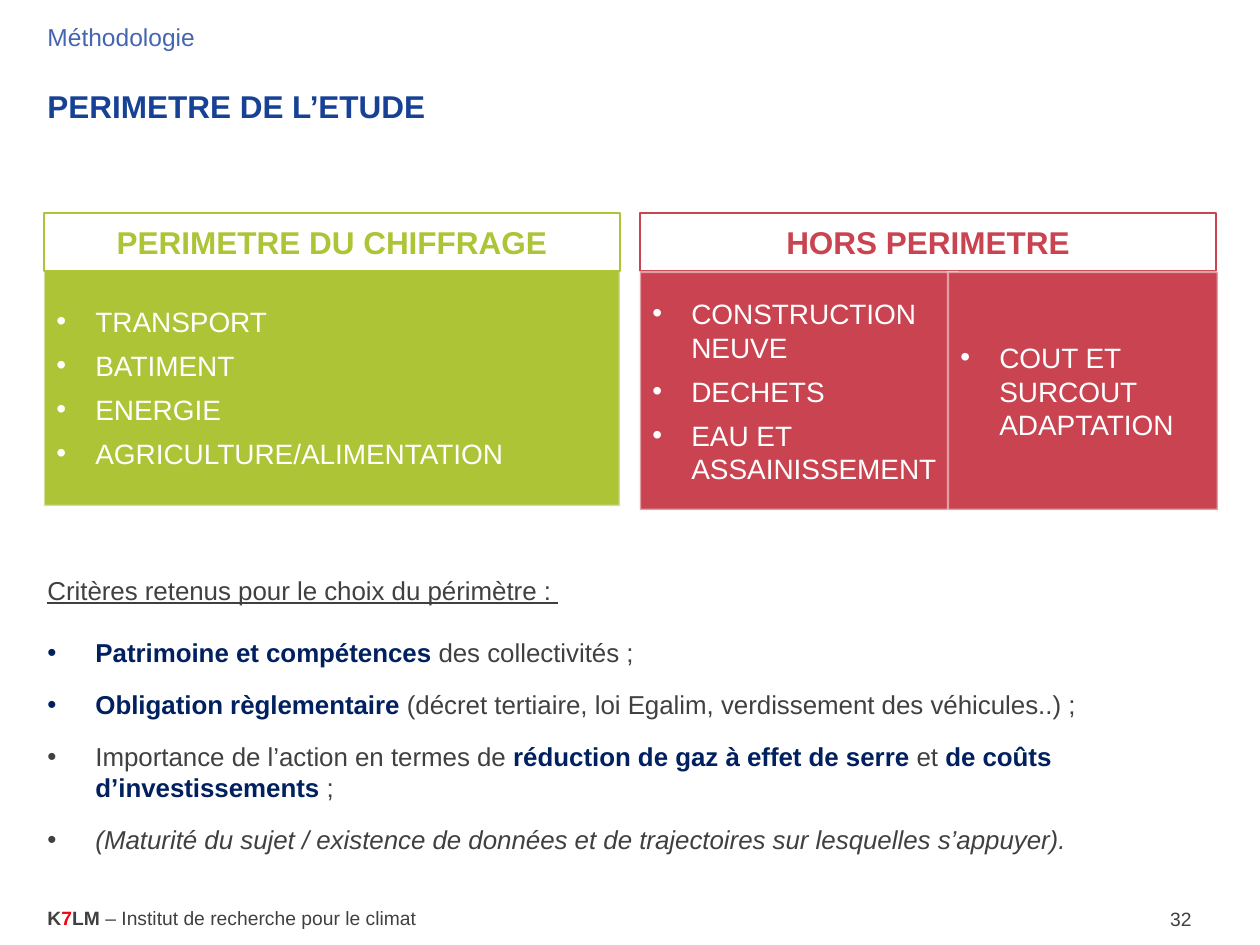
from dataclasses import dataclass

from lxml.etree import SubElement
from pptx import Presentation
from pptx.dml.color import RGBColor as Rgb
from pptx.enum.shapes import MSO_SHAPE as Shape
from pptx.enum.text import MSO_ANCHOR as Anchor, PP_ALIGN as Align
from pptx.oxml.ns import qn
from pptx.util import Emu, Pt

SCALE = 914400 / 126


def px(n):
    return Emu(round(n * SCALE))


@dataclass(frozen=True)
class Theme:
    font: str = "Arial"
    white: str = "FFFFFF"
    pale: str = "F9F9F9"
    grey: str = "404041"
    navy: str = "002060"
    blue: str = "174195"
    sky: str = "4565AF"
    lime: str = "ACC435"
    rose: str = "C94450"
    red: str = "EE0612"
    head: float = 18
    item: float = 16
    body: float = 14.8
    lead: float = 14
    foot: float = 11


class Deck:
    def __init__(self, theme):
        self.theme = theme
        self.file = Presentation()
        self.file.slide_width, self.file.slide_height = px(1260), px(945)
        self.slide = self.file.slides.add_slide(self.file.slide_layouts[6])

    def para(self, frame, runs, size, first=False, align=Align.LEFT,
             before=0, after=0, indent=0, line=None):
        par = frame.paragraphs[0] if first else frame.add_paragraph()
        par.alignment = align
        par.space_before, par.space_after = Pt(before), Pt(after)
        if line:
            par.line_spacing = line
        if indent:
            props = par._p.get_or_add_pPr()
            props.set("marL", str(px(indent)))
            props.set("indent", str(-px(indent)))
            SubElement(props, qn("a:buFont"), typeface=self.theme.font)
            SubElement(props, qn("a:buChar"), char="•")
        for text, color, style in runs:
            run = par.add_run()
            run.text = text
            font = run.font
            font.name, font.size = self.theme.font, Pt(size)
            font.color.rgb = Rgb.from_string(color)
            font.bold = "b" in style
            font.italic = "i" in style
            font.underline = "u" in style

    def text(self, box, anchor=Anchor.TOP):
        frame = self.slide.shapes.add_textbox(*map(px, box)).text_frame
        frame.word_wrap = True
        frame.vertical_anchor = anchor
        return frame

    def label(self, box, runs, size, anchor=Anchor.TOP, **kind):
        self.para(self.text(box, anchor), runs, size, first=True, **kind)

    def rect(self, box, fill, edge, width):
        shape = self.slide.shapes.add_shape(Shape.RECTANGLE, *map(px, box))
        shape.shadow.inherit = False
        shape.fill.solid()
        shape.fill.fore_color.rgb = Rgb.from_string(fill)
        shape.line.color.rgb = Rgb.from_string(edge)
        shape.line.width = Pt(width)
        shape.text_frame.word_wrap = True
        shape.text_frame.vertical_anchor = Anchor.MIDDLE
        return shape

    def head(self, box, text, color):
        shape = self.rect(box, self.theme.white, color, 0.85)
        self.para(shape.text_frame, [(text, color, "b")], self.theme.head,
                  first=True, align=Align.CENTER)

    def panel(self, box, items, color):
        shape = self.rect(box, color, self.theme.pale, 1.35)
        tint = shape.line._ln.find(".//" + qn("a:srgbClr"))
        SubElement(tint, qn("a:alpha"), val="50000")
        for n, item in enumerate(items):
            self.para(shape.text_frame, [(item, self.theme.white, "")],
                      self.theme.item, first=n == 0, after=6, indent=39)


def main():
    look = Theme()
    deck = Deck(look)
    grey, navy = look.grey, look.navy
    left, wide = 35, 1191

    deck.label((left, 16, wide, 40), [("Méthodologie", look.sky, "")],
               look.lead, before=2.8)
    deck.label((left, 55, wide, 100),
               [("PERIMETRE DE L’ETUDE", look.blue, "b")], look.head,
               Anchor.MIDDLE, align=Align.JUSTIFY, after=8, line=1.07)

    deck.panel((44, 268, 576, 238),
               ["TRANSPORT", "BATIMENT", "ENERGIE",
                "AGRICULTURE/ALIMENTATION"], look.lime)
    deck.head((44, 213, 576, 58), "PERIMETRE DU CHIFFRAGE", look.lime)
    deck.head((640, 213, 576, 58), "HORS PERIMETRE", look.rose)
    deck.panel((640, 272, 318, 238),
               ["CONSTRUCTION NEUVE", "DECHETS", "EAU ET ASSAINISSEMENT"],
               look.rose)
    deck.panel((948, 272, 270, 238), ["COUT ET SURCOUT ADAPTATION"],
               look.rose)

    frame = deck.text((left, 568, wide, 270))
    deck.para(frame,
              [("Critères retenus pour le choix du périmètre : ", grey, "u")],
              look.body, first=True, before=6, after=12)
    rules = [
        [("Patrimoine et compétences ", navy, "b"),
         ("des collectivités ;", grey, "")],
        [("Obligation règlementaire ", navy, "b"),
         ("(décret tertiaire, loi Egalim, verdissement des véhicules..) ;",
          grey, "")],
        [("Importance de l’action en termes de ", grey, ""),
         ("réduction de gaz à effet de serre ", navy, "b"),
         ("et ", grey, ""),
         ("de coûts d’investissements", navy, "b"),
         (" ;", grey, "")],
        [("(Maturité du sujet / existence de données et de trajectoires "
          "sur lesquelles s’appuyer).", grey, "i")],
    ]
    for runs in rules:
        deck.para(frame, runs, look.body, before=6, after=6, indent=48)

    deck.label((left, 900, 427, 37),
               [("K", grey, "b"), ("7", look.red, "b"), ("LM ", grey, "b"),
                ("– Institut de recherche pour le climat", grey, "")],
               look.foot)
    deck.label((1106, 900, 98, 37), [("32", grey, "")], look.foot,
               Anchor.MIDDLE, align=Align.RIGHT)
    deck.file.save("out.pptx")


if __name__ == "__main__":
    main()
